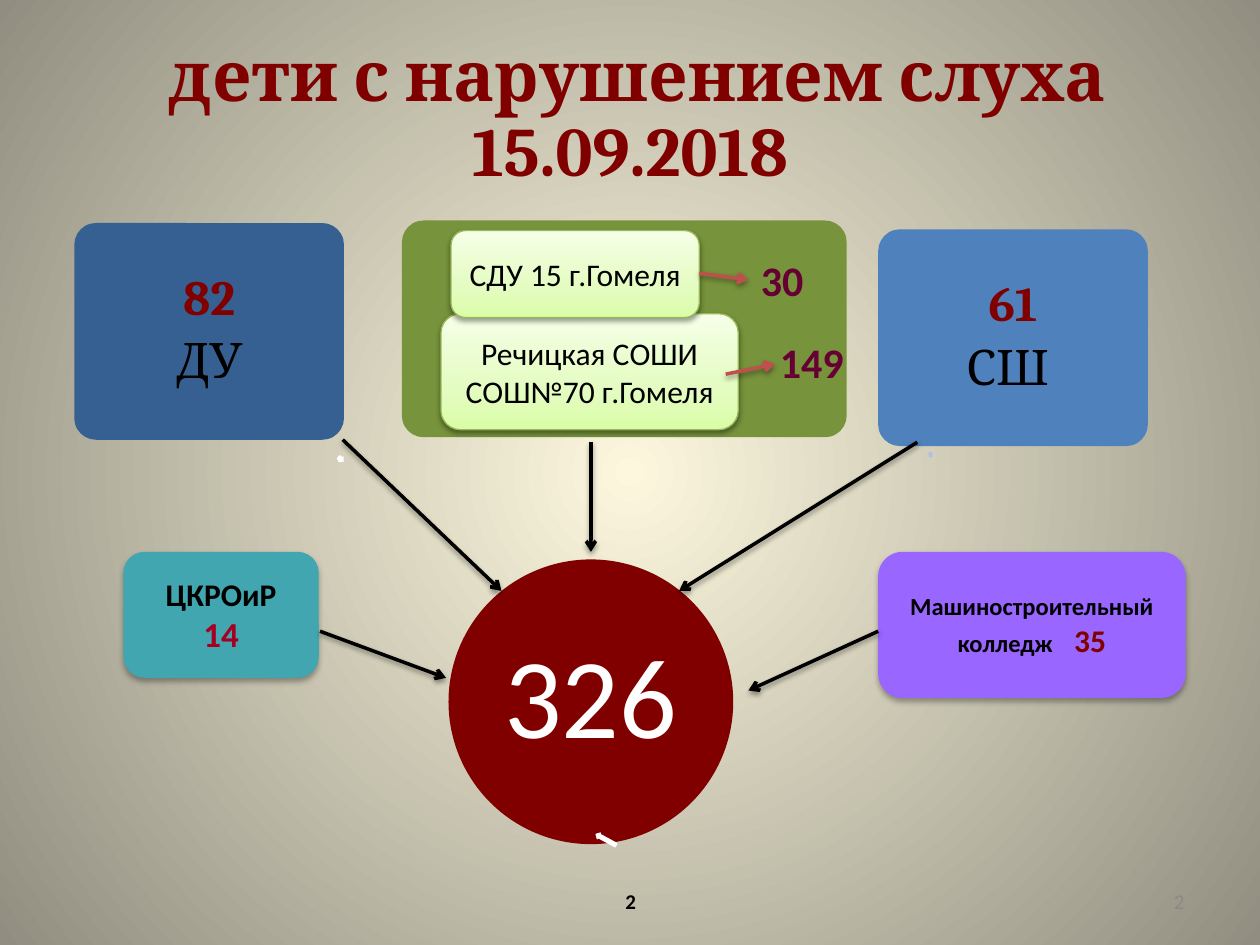
from dataclasses import dataclass, field
from typing import Optional

import pptx
import pptx.dml.color
import pptx.enum.shapes
import pptx.enum.text
import pptx.oxml
import pptx.oxml.ns
import pptx.util
from lxml import etree

Inches, Pt = pptx.util.Inches, pptx.util.Pt
RGBColor = pptx.dml.color.RGBColor
Shape = pptx.enum.shapes.MSO_SHAPE
Align = pptx.enum.text.PP_ALIGN
Anchor = pptx.enum.text.MSO_ANCHOR
qn = pptx.oxml.ns.qn


@dataclass(frozen=True)
class Theme:
    heading: str = "Cambria"
    body: str = "Calibri"
    black: str = "000000"
    white: str = "FFFFFF"
    maroon: str = "800000"
    plum: str = "660033"
    crimson: str = "A50021"
    grey: str = "898989"
    red_arrow: str = "C0504D"
    navy: str = "376092"
    blue: str = "4F81BD"
    pale_blue: str = "B3C1DB"
    olive: str = "77933C"
    lime_line: str = "98B955"
    violet: str = "9966FF"
    teal: str = "42A6B0"
    backdrop: tuple = ((0, "FCF7DD"), (100, "918E81"))
    lime: tuple = ((0, "DAFDA7"), (35, "E4FCC2"), (100, "F5FFE7"))
    title_size: float = 39.6
    total_size: float = 65
    card_size: float = 28
    count_size: float = 24
    large: float = 20
    normal: float = 18
    small: float = 14
    footer: float = 12


THEME = Theme()


@dataclass(frozen=True)
class Run:
    text: str
    size: float = THEME.normal
    color: str = THEME.black
    bold: bool = False
    name: str = THEME.body
    spacing: int = 0


@dataclass(frozen=True)
class Shadow:
    alpha: int
    blur: float
    distance: float


SOFT = Shadow(38, 3.1, 1.6)
DEEP = Shadow(32, 3.5, 2.2)


@dataclass(frozen=True)
class Box:
    at: tuple
    paragraphs: list = field(default_factory=list)
    kind: Optional[int] = Shape.ROUNDED_RECTANGLE
    fill: object = None
    line: Optional[str] = None
    shadow: Optional[Shadow] = None
    adjustments: tuple = ()
    rotation: float = 0
    text_format: dict = field(default_factory=dict)
    paragraph_format: dict = field(default_factory=dict)


@dataclass(frozen=True)
class Arrow:
    start: tuple
    end: tuple
    color: str = THEME.black


def set_gradient(fill, owner, stops: tuple, direction: str) -> None:
    """Replace the default gradient in owner by the given stops and direction."""
    fill.gradient()
    gradient = owner.find(".//" + qn("a:gradFill"))
    for child in list(gradient):
        gradient.remove(child)
    stop_list = etree.SubElement(gradient, qn("a:gsLst"))
    for position, color in stops:
        stop = etree.SubElement(stop_list, qn("a:gs"), pos=str(position * 1000))
        etree.SubElement(stop, qn("a:srgbClr"), val=color)
    namespace = pptx.oxml.ns.nsdecls("a")
    gradient.append(pptx.oxml.parse_xml(direction.replace(" ", f" {namespace} ", 1)))


def set_shadow(properties, shadow: Shadow) -> None:
    effects = properties.find(qn("a:effectLst"))
    if effects is None:
        effects = etree.SubElement(properties, qn("a:effectLst"))
    outer = etree.SubElement(effects, qn("a:outerShdw"), blurRad=str(int(Pt(shadow.blur))),
                             dist=str(int(Pt(shadow.distance))), dir="5400000", rotWithShape="0")
    color = etree.SubElement(outer, qn("a:srgbClr"), val=THEME.black)
    etree.SubElement(color, qn("a:alpha"), val=str(shadow.alpha * 1000))


def write_run(paragraph, run: Run) -> None:
    font_format = {"size": Pt(run.size), "bold": run.bold, "name": run.name}
    for index, line in enumerate(run.text.split("\n")):
        if index:
            paragraph.add_line_break()
        text_run = paragraph.add_run()
        text_run.text = line
        for key, value in font_format.items():
            setattr(text_run.font, key, value)
        text_run.font.color.rgb = RGBColor.from_string(run.color)
        if run.spacing:
            text_run.font._element.set("spc", str(run.spacing * 100))


def write_text(shape, box: Box) -> None:
    frame = shape.text_frame
    for key, value in ({"word_wrap": True, "vertical_anchor": Anchor.MIDDLE} | box.text_format).items():
        setattr(frame, key, value)
    for index, runs in enumerate(box.paragraphs):
        paragraph = frame.add_paragraph() if index else frame.paragraphs[0]
        for key, value in ({"alignment": Align.CENTER} | box.paragraph_format).items():
            setattr(paragraph, key, value)
        for run in runs:
            write_run(paragraph, run)


def draw_box(slide, box: Box) -> None:
    place = [Inches(value) for value in box.at]
    if box.kind is None:
        shape = slide.shapes.add_textbox(*place)
    else:
        shape = slide.shapes.add_shape(box.kind, *place)
        shape.shadow.inherit = False
        shape.rotation = box.rotation
        for index, value in enumerate(box.adjustments):
            shape.adjustments[index] = value
        if isinstance(box.fill, tuple):
            set_gradient(shape.fill, shape._element, box.fill, '<a:lin ang="16200000" scaled="1"/>')
        else:
            shape.fill.solid()
            shape.fill.fore_color.rgb = RGBColor.from_string(box.fill)
        if box.line:
            shape.line.color.rgb = RGBColor.from_string(box.line)
            shape.line.width = Pt(0.75)
        else:
            shape.line.fill.background()
        if box.shadow:
            set_shadow(shape._element.spPr, box.shadow)
    if box.paragraphs:
        write_text(shape, box)


def draw_arrow(slide, arrow: Arrow) -> None:
    ends = [Inches(value) for value in arrow.start + arrow.end]
    connector = slide.shapes.add_connector(pptx.enum.shapes.MSO_CONNECTOR.STRAIGHT, *ends)
    connector.line.color.rgb = RGBColor.from_string(arrow.color)
    connector.line.width = Pt(2)
    etree.SubElement(connector.line._get_or_add_ln(), qn("a:tailEnd"), type="arrow")
    set_shadow(connector._element.spPr, SOFT)


def card(left: float, top: float, fill: str, count: str, label: str) -> Box:
    margins = {f"margin_{side}": Inches(0.06) for side in ("left", "right", "top", "bottom")}
    return Box((left, top, 2.14, 1.72),
               [[Run(count, THEME.card_size, THEME.maroon, True, THEME.heading)],
                [Run(label, THEME.card_size, name=THEME.heading)]],
               fill=fill, adjustments=(0.1,), text_format=margins,
               paragraph_format={"line_spacing": 0.9, "space_after": Pt(6)})


def school(at: tuple, *lines: str) -> Box:
    return Box(at, [[Run(line)] for line in lines], fill=THEME.lime, line=THEME.lime_line, shadow=SOFT)


def count_label(at: tuple, text: str, wrap: bool) -> Box:
    return Box(at, [[Run(text, THEME.count_size, THEME.plum, True)]], kind=None,
               text_format={"word_wrap": wrap, "vertical_anchor": Anchor.TOP},
               paragraph_format={"alignment": Align.LEFT})


def marker(at: tuple, rotation: float, fill: str, line: Optional[str] = None) -> Box:
    return Box(at, kind=Shape.LEFT_ARROW, fill=fill, line=line, adjustments=(0.6, 0.5), rotation=rotation)


BOXES = [
    # Title
    Box((0.5, 0.3, 9, 1.25), [[Run(" дети с нарушением слуха\n15.09.2018", THEME.title_size,
                                  THEME.maroon, True, THEME.heading)]],
        kind=None, paragraph_format={"line_spacing": 0.9}),
    # Total and the three upper panels
    Box((3.56, 4.44, 2.26, 2.26), [[Run("326", THEME.total_size, THEME.white)]],
        kind=Shape.OVAL, fill=THEME.maroon,
        text_format={"margin_left": Inches(0.05), "margin_right": Inches(0.05)},
        paragraph_format={"line_spacing": 0.9}),
    marker((2.68, 3.62, 0.05, 0.05), 224.3, THEME.white, THEME.white),
    card(0.59, 1.77, THEME.navy, "82", "ДУ"),
    marker((4.72, 6.64, 0.18, 0.05), 28.5, THEME.white, THEME.white),
    Box((3.19, 1.75, 3.53, 1.72), fill=THEME.olive, adjustments=(0.1,)),
    marker((7.36, 3.58, 0.05, 0.05), 85.9, THEME.pale_blue),
    card(6.97, 1.82, THEME.blue, "61", "СШ "),
    # Page numbers
    Box((3.42, 6.95, 3.17, 0.4), [[Run("2", THEME.footer, bold=True)]], kind=None),
    Box((7.17, 6.95, 2.33, 0.4), [[Run("2", THEME.footer, THEME.grey)]], kind=None,
        paragraph_format={"alignment": Align.RIGHT}),
    # Special schools
    school((3.5, 2.49, 2.36, 0.92), "Речицкая СОШИ", "СОШ№70 г.Гомеля"),
    school((3.58, 1.83, 1.97, 0.69), "СДУ 15 г.Гомеля"),
    count_label((5.94, 1.97, 0.64, 0.5), "30", True),
    count_label((6.09, 2.62, 0.71, 0.5), "149", False),
    # College and centre
    Box((6.97, 4.38, 2.44, 1.16),
        [[Run("Машиностроительный колледж", THEME.small, bold=True),
          Run(" ", THEME.small, bold=True, spacing=9),
          Run("35", THEME.normal, THEME.maroon, True)]], fill=THEME.violet, shadow=DEEP),
    Box((0.98, 4.38, 1.55, 1), [[Run("ЦКРОиР", bold=True)],
                                [Run("14", THEME.large, THEME.crimson, True)]],
        fill=THEME.teal, shadow=DEEP),
]

ARROWS = [
    Arrow((5.55, 2.17), (5.94, 2.22), THEME.red_arrow),
    Arrow((5.76, 2.97), (6.15, 2.89), THEME.red_arrow),
    Arrow((4.69, 3.51), (4.69, 4.38)),
    Arrow((7.28, 3.51), (5.39, 4.69)),
    Arrow((2.72, 3.49), (3.98, 4.69)),
    Arrow((2.54, 5.01), (3.54, 5.38)),
    Arrow((6.97, 5.01), (5.94, 5.48)),
]


def main() -> None:
    presentation = pptx.Presentation()
    presentation.slide_width, presentation.slide_height = Inches(10), Inches(7.5)
    slide = presentation.slides.add_slide(presentation.slide_layouts[6])
    centre = " ".join(f'{side}="50000"' for side in "ltrb")
    set_gradient(slide.background.fill, slide._element, THEME.backdrop,
                 f'<a:path path="circle"><a:fillToRect {centre}/></a:path>')
    for box in BOXES:
        draw_box(slide, box)
    for arrow in ARROWS:
        draw_arrow(slide, arrow)
    presentation.save("out.pptx")


if __name__ == "__main__":
    main()
